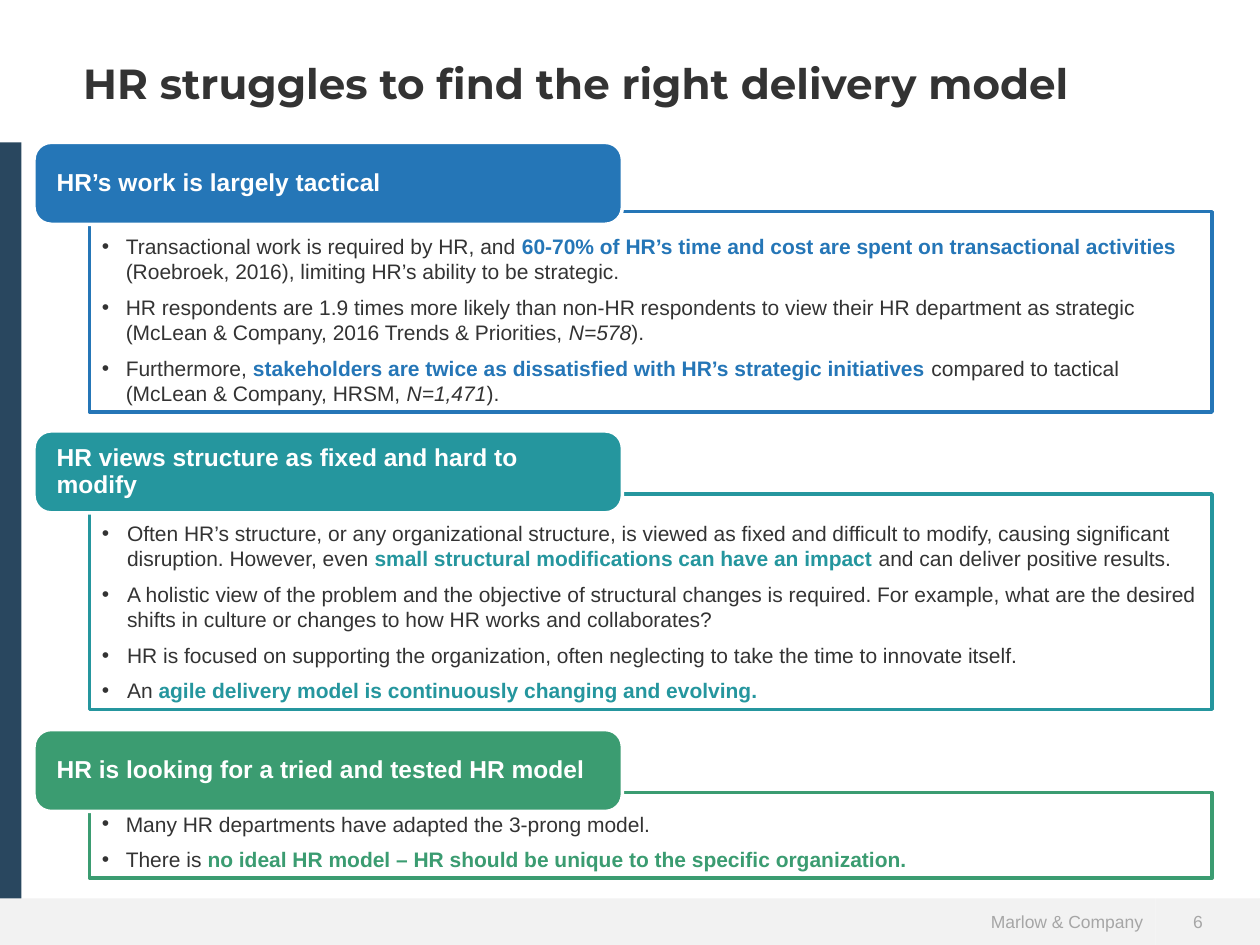
"""Build the slide on why HR struggles to find the right delivery model."""
from lxml.etree import SubElement
from pptx import Presentation
from pptx.dml.color import RGBColor
from pptx.enum.shapes import MSO_SHAPE as Shape
from pptx.enum.text import MSO_ANCHOR as Anchor, PP_ALIGN as Align
from pptx.oxml.ns import qn
from pptx.util import Inches, Pt

WHITE = RGBColor(0xFF, 0xFF, 0xFF)
INK = RGBColor(0x33, 0x33, 0x33)
GREY = RGBColor(0xA6, 0xA6, 0xA6)
PALE = RGBColor(0xF2, 0xF2, 0xF2)
NAVY = RGBColor(0x29, 0x47, 0x5F)
BLUE = RGBColor(0x25, 0x76, 0xB7)
TEAL = RGBColor(0x25, 0x96, 0x9E)
GREEN = RGBColor(0x3B, 0x9C, 0x71)

PLAIN, STRONG, ITALIC = "plain", "strong", "italic"
BULLET, FOLLOW = "bullet", "follow"

TITLE = "HR struggles to find the right delivery model"
FOOTER, PAGE_NUMBER = "Marlow & Company", "6"
SECTIONS = [
    {"heading": "HR’s work is largely tactical", "color": BLUE,
     "tab_top": 1.13, "top": 1.68, "bottom": 3.27, "indent": 0.19, "points": [
        (BULLET, [("Transactional work is required by HR, and ", PLAIN),
                  ("60-70% of HR’s time and cost are spent on transactional activities ", STRONG),
                  ("(Roebroek, 2016), limiting HR’s ability to be strategic.", PLAIN)]),
        (BULLET, [("HR respondents are 1.9 times more likely than non-HR respondents "
                   "to view their HR department as strategic", PLAIN)]),
        (FOLLOW, [("(McLean & Company, 2016 Trends & Priorities, ", PLAIN),
                  ("N=578", ITALIC), (").", PLAIN)]),
        (BULLET, [("Furthermore, ", PLAIN),
                  ("stakeholders are twice as dissatisfied with HR’s strategic initiatives", STRONG),
                  (" compared to tactical", PLAIN)]),
        (FOLLOW, [("(McLean & Company, HRSM, ", PLAIN),
                  ("N=1,471", ITALIC), (").", PLAIN)])]},
    {"heading": "HR views structure as fixed and hard to modify", "color": TEAL,
     "tab_top": 3.42, "top": 3.92, "bottom": 5.63, "indent": 0.2, "points": [
        (BULLET, [("Often HR’s structure, or any organizational structure, is viewed as fixed "
                   "and difficult to modify, causing significant disruption. However, even ", PLAIN),
                  ("small structural modifications can have an impact ", STRONG),
                  ("and can deliver positive results.", PLAIN)]),
        (BULLET, [("A holistic view of the problem and the objective of structural changes is "
                   "required. For example, what are the desired shifts in culture or changes to "
                   "how HR works and collaborates?", PLAIN)]),
        (BULLET, [("HR is focused on supporting the organization, often neglecting to take "
                   "the time to innovate itself.", PLAIN)]),
        (BULLET, [("An", PLAIN),
                  (" agile delivery model is continuously changing and evolving.", STRONG)])]},
    {"heading": "HR is looking for a tried and tested HR model", "color": GREEN,
     "tab_top": 5.79, "top": 6.29, "bottom": 6.97, "indent": 0.19, "points": [
        (BULLET, [("Many HR departments have adapted the 3-prong model.", PLAIN)]),
        (BULLET, [("There is ", PLAIN),
                  ("no ideal HR model – HR should be unique to the specific organization.", STRONG)])]},
]

WIDTH, HEIGHT = 10, 7.5
BAND_TOP, BAND_SPLIT, BAR_TOP = 7.13, 9.17, 1.13
PANEL_LEFT, PANEL_WIDTH = 0.71, 8.91
TAB_LEFT, TAB_WIDTH, TAB_HEIGHT = 0.27, 4.67, 0.65


def add_block(page, kind, left, top, width, height, fill, line=None):
    shape = page.shapes.add_shape(kind, *map(Inches, (left, top, width, height)))
    shape.shadow.inherit = False
    shape.fill.solid()
    shape.fill.fore_color.rgb = fill
    if line is None:
        shape.line.fill.background()
    else:
        shape.line.color.rgb = line
        shape.line.width = Pt(2)
    shape.text_frame.word_wrap = True
    shape.text_frame.vertical_anchor = Anchor.MIDDLE
    return shape


def style(para, size, color, name="Arial", bold=False, align=Align.LEFT):
    para.alignment = align
    font = para.font
    font.size, font.name, font.bold = Pt(size), name, bold
    font.color.rgb = color


def write_point(para, kind, spans, indent, accent):
    props = para._p.get_or_add_pPr()
    props.set("marL", str(Inches(indent)))
    if kind == BULLET:
        props.set("indent", str(-Inches(indent)))
        SubElement(props, qn("a:buFont"), typeface="Arial")
        SubElement(props, qn("a:buChar"), char="•")
    style(para, 12, INK)
    for text, look in spans:
        span = para.add_run()
        span.text = text
        if look == STRONG:
            span.font.bold = True
            span.font.color.rgb = accent
        elif look == ITALIC:
            span.font.italic = True


def add_section(page, section):
    color, top = section["color"], section["top"]
    panel = add_block(page, Shape.RECTANGLE, PANEL_LEFT, top, PANEL_WIDTH,
                      section["bottom"] - top, WHITE, color)
    frame = panel.text_frame
    frame.vertical_anchor = Anchor.BOTTOM
    for index, (kind, spans) in enumerate(section["points"]):
        para = frame.add_paragraph() if index else frame.paragraphs[0]
        write_point(para, kind, spans, section["indent"], color)
        if index and kind == BULLET:
            para.space_before = Pt(6)

    tab = add_block(page, Shape.ROUNDED_RECTANGLE, TAB_LEFT, section["tab_top"],
                    TAB_WIDTH, TAB_HEIGHT, color, WHITE)
    tab.adjustments[0] = 0.21
    frame = tab.text_frame
    frame.margin_left, frame.margin_right = Inches(0.14), Inches(0.16)
    para = frame.paragraphs[0]
    para.text = section["heading"]
    para.line_spacing = 0.9
    style(para, 14, WHITE, bold=True)


def add_footer(page):
    split = BAND_SPLIT
    parts = [(0, split, FOOTER, Align.RIGHT, 0.1),
             (split, WIDTH - split, PAGE_NUMBER, Align.LEFT, 0.3)]
    for left, width, text, align, margin in parts:
        band = add_block(page, Shape.RECTANGLE, left, BAND_TOP, width,
                         HEIGHT - BAND_TOP, PALE)
        band.text_frame.margin_left = Inches(margin)
        para = band.text_frame.paragraphs[0]
        para.text = text
        style(para, 10, GREY, align=align)


def add_title(page):
    title = page.shapes.title
    title.left, title.top, title.width, title.height = map(Inches, (0.56, 0.41, 8.89, 0.94))
    title.text_frame.vertical_anchor = Anchor.TOP
    para = title.text_frame.paragraphs[0]
    para.text = TITLE
    style(para, 24, INK, "Montserrat", bold=True)


def main():
    deck = Presentation()
    deck.slide_width, deck.slide_height = Inches(WIDTH), Inches(HEIGHT)
    page = deck.slides.add_slide(deck.slide_layouts[5])
    add_footer(page)
    add_title(page)
    for section in SECTIONS:
        add_section(page, section)
    add_block(page, Shape.RECTANGLE, 0, BAR_TOP, 0.17, BAND_TOP - BAR_TOP, NAVY)
    deck.save("out.pptx")


if __name__ == "__main__":
    main()
